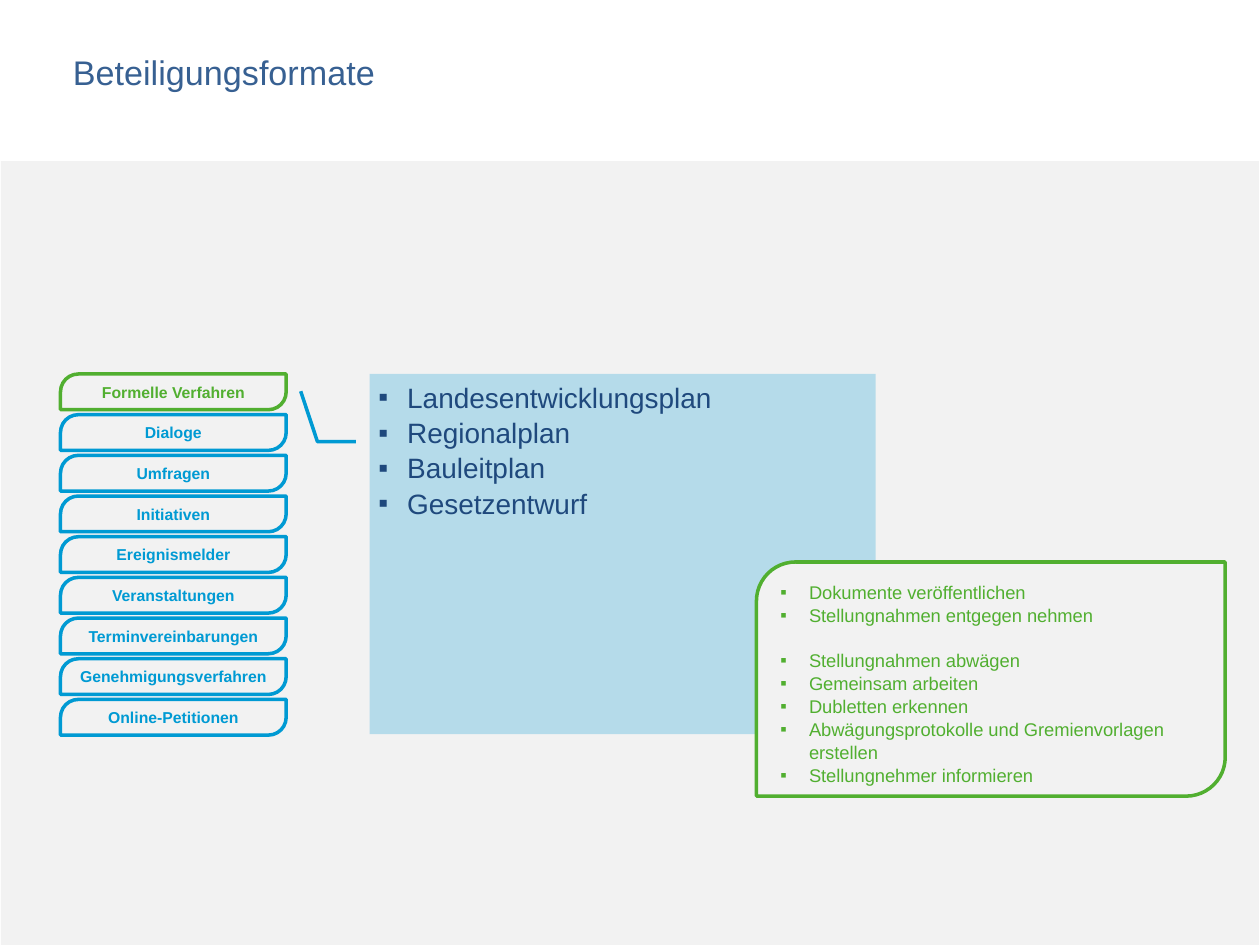
"""Build the slide on participation formats."""
from lxml.etree import SubElement
from pptx import Presentation
from pptx.dml.color import RGBColor
from pptx.enum.shapes import MSO_SHAPE as Shape
from pptx.enum.text import MSO_ANCHOR as Anchor, PP_ALIGN as Align
from pptx.oxml.ns import qn
from pptx.util import Cm, Pt

WHITE_GREY = RGBColor(0xF2, 0xF2, 0xF2)
BLUE = RGBColor(0x00, 0x9A, 0xD3)
GREEN = RGBColor(0x51, 0xAF, 0x30)
NAVY = RGBColor(0x1F, 0x49, 0x7D)
TITLE_BLUE = RGBColor(0x37, 0x60, 0x92)

TITLE = "Beteiligungsformate"
FORMATS = [
    "Formelle Verfahren", "Dialoge", "Umfragen", "Initiativen", "Ereignismelder",
    "Veranstaltungen", "Terminvereinbarungen", "Genehmigungsverfahren", "Online-Petitionen",
]
ACTIVE = "Formelle Verfahren"
PLANS = ["Landesentwicklungsplan", "Regionalplan", "Bauleitplan", "Gesetzentwurf"]
PUBLISH = ["Dokumente veröffentlichen", "Stellungnahmen entgegen nehmen"]
EVALUATE = [
    "Stellungnahmen abwägen", "Gemeinsam arbeiten", "Dubletten erkennen",
    "Abwägungsprotokolle und Gremienvorlagen erstellen", "Stellungnehmer informieren",
]
CALLOUT = [0.188, -0.027, 0.188, -0.103, 0.048, -0.136]
LEFT, TOP, PITCH = 1.22, 7.54, 0.82
INDENT = Cm(0.58)


def add_shape(s, kind, box, fill, line=None, adjustments=()):
    sp = s.shapes.add_shape(kind, *map(Cm, box))
    sp.shadow.inherit = False
    sp.fill.solid()
    sp.fill.fore_color.rgb = fill
    if line is None:
        sp.line.fill.background()
    else:
        sp.line.color.rgb = line
        sp.line.width = Pt(2)
    for i, value in enumerate(adjustments):
        sp.adjustments[i] = value
    return sp


def add_run(p, text, size, color, bold=False):
    r = p.add_run()
    r.text = text
    r.font.name = "Arial"
    r.font.size = Pt(size)
    r.font.bold = bold
    r.font.color.rgb = color


def add_bullets(tf, items, size, color, gap_at=None):
    tf.word_wrap = True
    tf.vertical_anchor = Anchor.TOP
    for i, item in enumerate(items):
        p = tf.paragraphs[0] if i == 0 else tf.add_paragraph()
        p.alignment = Align.LEFT
        p.line_spacing = 1.05
        if i == gap_at:
            p.space_before = Pt(12.5)
        pPr = p._p.get_or_add_pPr()
        pPr.set("marL", str(INDENT))
        pPr.set("indent", str(-INDENT))
        SubElement(pPr, qn("a:buFont"), typeface="Arial")
        SubElement(pPr, qn("a:buChar"), char="▪")
        add_run(p, item, size, color)


def main():
    prs = Presentation()
    prs.slide_width, prs.slide_height = Cm(25.4), Cm(19.05)
    s = prs.slides.add_slide(prs.slide_layouts[6])

    add_shape(s, Shape.RECTANGLE, (0.02, 3.25, 25.36, 15.8), WHITE_GREY)

    plans = add_shape(s, Shape.LINE_CALLOUT_2_NO_BORDER, (7.45, TOP, 10.2, 7.26),
                      BLUE, BLUE, CALLOUT)
    color = plans.fill._xPr.find(qn("a:solidFill"))[0]
    SubElement(color, qn("a:alpha"), val="25000")
    tf = plans.text_frame
    tf.margin_left = tf.margin_right = Cm(0.18)
    tf.margin_top = tf.margin_bottom = Cm(0.1)
    add_bullets(tf, PLANS, 16, NAVY)

    tasks = add_shape(s, Shape.ROUND_2_DIAG_RECTANGLE, (15.25, 11.33, 9.45, 4.72),
                      WHITE_GREY, GREEN)
    add_bullets(tasks.text_frame, PUBLISH + EVALUATE, 10.5, GREEN, len(PUBLISH))

    title = s.shapes.add_textbox(Cm(LEFT), Cm(0.92), Cm(13.28), Cm(2.3))
    tf = title.text_frame
    tf.word_wrap = True
    add_run(tf.paragraphs[0], TITLE, 19.5, TITLE_BLUE)

    for i, name in enumerate(FORMATS):
        color = GREEN if name == ACTIVE else BLUE
        sp = add_shape(s, Shape.ROUND_2_DIAG_RECTANGLE, (LEFT, TOP + i * PITCH, 4.55, 0.72),
                       WHITE_GREY, color, (0.5, 0))
        tf = sp.text_frame
        tf.margin_left = tf.margin_right = tf.margin_top = tf.margin_bottom = 0
        tf.vertical_anchor = Anchor.MIDDLE
        p = tf.paragraphs[0]
        p.alignment = Align.CENTER
        add_run(p, name, 9, color, True)

    prs.save("out.pptx")


if __name__ == "__main__":
    main()
